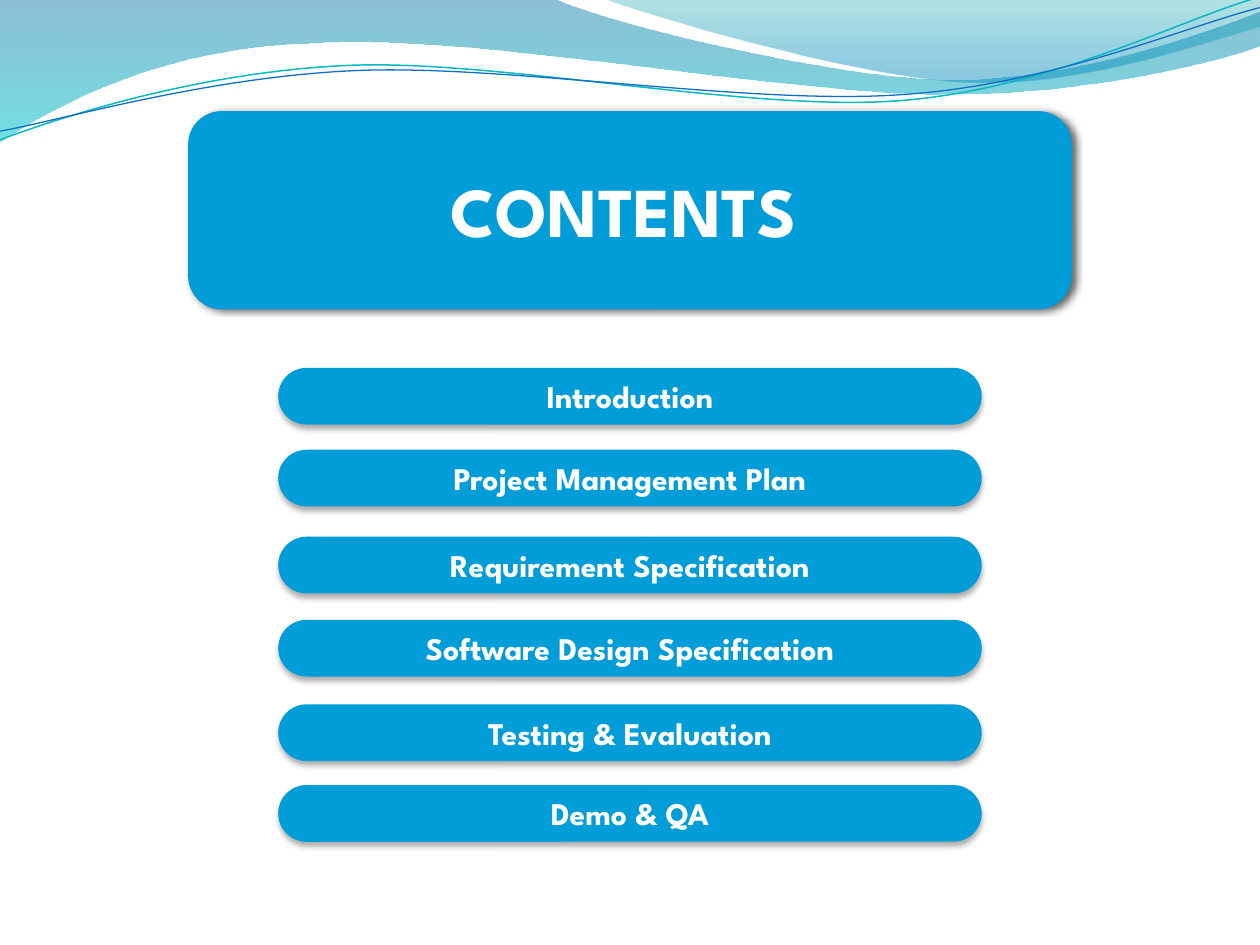
import pptx
import pptx.dml.color
import pptx.enum.shapes
import pptx.enum.text
import pptx.oxml
import pptx.oxml.ns
import pptx.util
from lxml import etree

Pt = pptx.util.Pt
FONT = "League Spartan"
BLUE = "009DD9"
WHITE = "FFFFFF"

WIDE_WAVE = [
    [(316.8, -0.7)],
    [(342.7, 12.2), (478.1, 45.4), (545.8, 45.4)],
    [(614.2, 45.4), (689.8, 18.7), (720, 6.5)],
    [(720.7, 25.9)],
    [(707.8, 31.7), (626.4, 54.7), (537.1, 54)],
    [(447.1, 54), (275, 20.2), (185, 24.5)],
    [(92.9, 25.9), (33.1, 59.8), (-0.7, 81.4)],
]
RIGHT_WAVE = [
    [(366.5, 7.9), (491, 44.6), (553.7, 46.8)],
    [(616.3, 49.7), (691.9, 23), (720, 15.1)],
    [(720, 0)],
]
TEAL_CURVE = [
    [(34.6, 67), (113.8, 41), (199.4, 37.4)],
    [(284.4, 33.8), (427, 64.1), (513.4, 57.6)],
    [(599.8, 51.1), (675.4, 10.8), (718.6, -1.4)],
]
BLUE_CURVE = [
    [(33.8, 69.1), (118.1, 43.9), (203.8, 40.3)],
    [(290.2, 36.7), (429.8, 60.5), (516.2, 54)],
    [(601.9, 48.2), (677.5, 15.1), (720, 4.3)],
]
TOPICS = [
    ("Introduction", 210.2),
    ("Project Management Plan", 257),
    ("Requirement Specification", 306.7),
    ("Software Design Specification", 354.2),
    ("Testing & Evaluation", 402.5),
    ("Demo & QA", 448.6),
]


def color(value):
    """Return the colour for a hex string."""
    return pptx.dml.color.RGBColor.from_string(value)


def add_curve(slide, start, segments, closed):
    """Add a freeform of straight (one point) and cubic (three point) segments."""
    builder = slide.shapes.build_freeform(Pt(start[0]), Pt(start[1]), scale=1.0)
    points = [(Pt(x), Pt(y)) for segment in segments for x, y in segment]
    builder.add_line_segments(points, close=closed)
    shape = builder.convert_to_shape()
    shape.shadow.inherit = False
    steps = iter(list(shape._element.iter(pptx.oxml.ns.qn("a:lnTo"))))
    for segment in segments:
        nodes = [next(steps) for _ in segment]
        if len(nodes) == 3:
            cubic = etree.Element(pptx.oxml.ns.qn("a:cubicBezTo"))
            nodes[0].addprevious(cubic)
            for node in nodes:
                cubic.append(node[0])
                node.getparent().remove(node)
    return shape


def add_wave(slide, start, segments, stops):
    """Add a closed wave with a translucent gradient running downwards."""
    shape = add_curve(slide, start, segments, True)
    shape.line.fill.background()
    shape.fill.gradient()
    shape.fill.gradient_angle = 270
    for stop, (position, value, opacity) in zip(shape.fill.gradient_stops, stops):
        stop.position = position
        stop.color.rgb = color(value)
        node = stop._gs.find(pptx.oxml.ns.qn("a:srgbClr"))
        alpha = etree.SubElement(node, pptx.oxml.ns.qn("a:alpha"))
        alpha.set("val", str(opacity * 1000))


def add_stroke(slide, start, segments, value, width):
    """Add an open curved line."""
    shape = add_curve(slide, start, segments, False)
    shape.fill.background()
    shape.line.color.rgb = color(value)
    shape.line.width = Pt(width)


def set_shadow(shape, opacity, blur, distance, angle):
    """Give a shape a black outer shadow."""
    shape.shadow.inherit = False
    effects = shape._element.spPr.find(pptx.oxml.ns.qn("a:effectLst"))
    effects.append(pptx.oxml.parse_xml(
        f'<a:outerShdw {pptx.oxml.ns.nsdecls("a")} blurRad="{Pt(blur)}" '
        f'dist="{Pt(distance)}" dir="{angle * 60000}" algn="ctr" rotWithShape="0">'
        f'<a:srgbClr val="000000"><a:alpha val="{opacity * 1000}"/></a:srgbClr>'
        '</a:outerShdw>'))


def add_panel(slide, left, top, width, height):
    """Add a blue rounded rectangle without an outline."""
    shape = slide.shapes.add_shape(
        pptx.enum.shapes.MSO_SHAPE.ROUNDED_RECTANGLE,
        Pt(left), Pt(top), Pt(width), Pt(height))
    shape.fill.solid()
    shape.fill.fore_color.rgb = color(BLUE)
    shape.line.fill.background()
    return shape


def write_text(shape, text, size, alignment):
    """Write one bold white paragraph into a shape."""
    shape.text_frame.word_wrap = True
    paragraph = shape.text_frame.paragraphs[0]
    paragraph.text = text
    paragraph.alignment = alignment
    paragraph.font.name = FONT
    paragraph.font.size = Pt(size)
    paragraph.font.bold = True
    paragraph.font.color.rgb = color(WHITE)


def add_topic(slide, text, top):
    """Add a pill-shaped contents entry."""
    shape = add_panel(slide, 159, top, 402, 32.4)
    shape.adjustments[0] = 0.5
    set_shadow(shape, 32, 3.5, 2.2, 90)
    shape.text_frame.vertical_anchor = pptx.enum.text.MSO_ANCHOR.MIDDLE
    write_text(shape, text, 18, pptx.enum.text.PP_ALIGN.CENTER)


def add_title(slide, text):
    """Add the title text."""
    box = slide.shapes.add_textbox(Pt(250.6), Pt(92.2), Pt(218.9), Pt(55.4))
    box.text_frame.auto_size = pptx.enum.text.MSO_AUTO_SIZE.SHAPE_TO_FIT_TEXT
    write_text(box, text, 40, pptx.enum.text.PP_ALIGN.LEFT)


def main():
    """Build the contents slide and save it."""
    presentation = pptx.Presentation()
    presentation.slide_width = Pt(720)
    presentation.slide_height = Pt(540)
    slide = presentation.slides.add_slide(presentation.slide_layouts[6])
    add_wave(slide, (0, 0), WIDE_WAVE, [(0, "0074A1", 45), (1, "00C6CF", 55)])
    add_wave(slide, (344.9, -0.7), RIGHT_WAVE,
             [(0, "00A1A9", 30), (0.8, "008BBF", 45)])
    add_stroke(slide, (0, 79.9), TEAL_CURVE, "0AB8BF", 0.85)
    add_stroke(slide, (0, 74.9), BLUE_CURVE, "0F6FC6", 0.75)
    banner = add_panel(slide, 108, 64, 504, 112.3)
    banner.line.color.rgb = color("009AD4")
    banner.line.width = Pt(1)
    set_shadow(banner, 60, 4, 2, 0)
    for text, top in TOPICS:
        add_topic(slide, text, top)
    add_title(slide, "CONTENTS")
    presentation.save("out.pptx")


if __name__ == "__main__":
    main()
